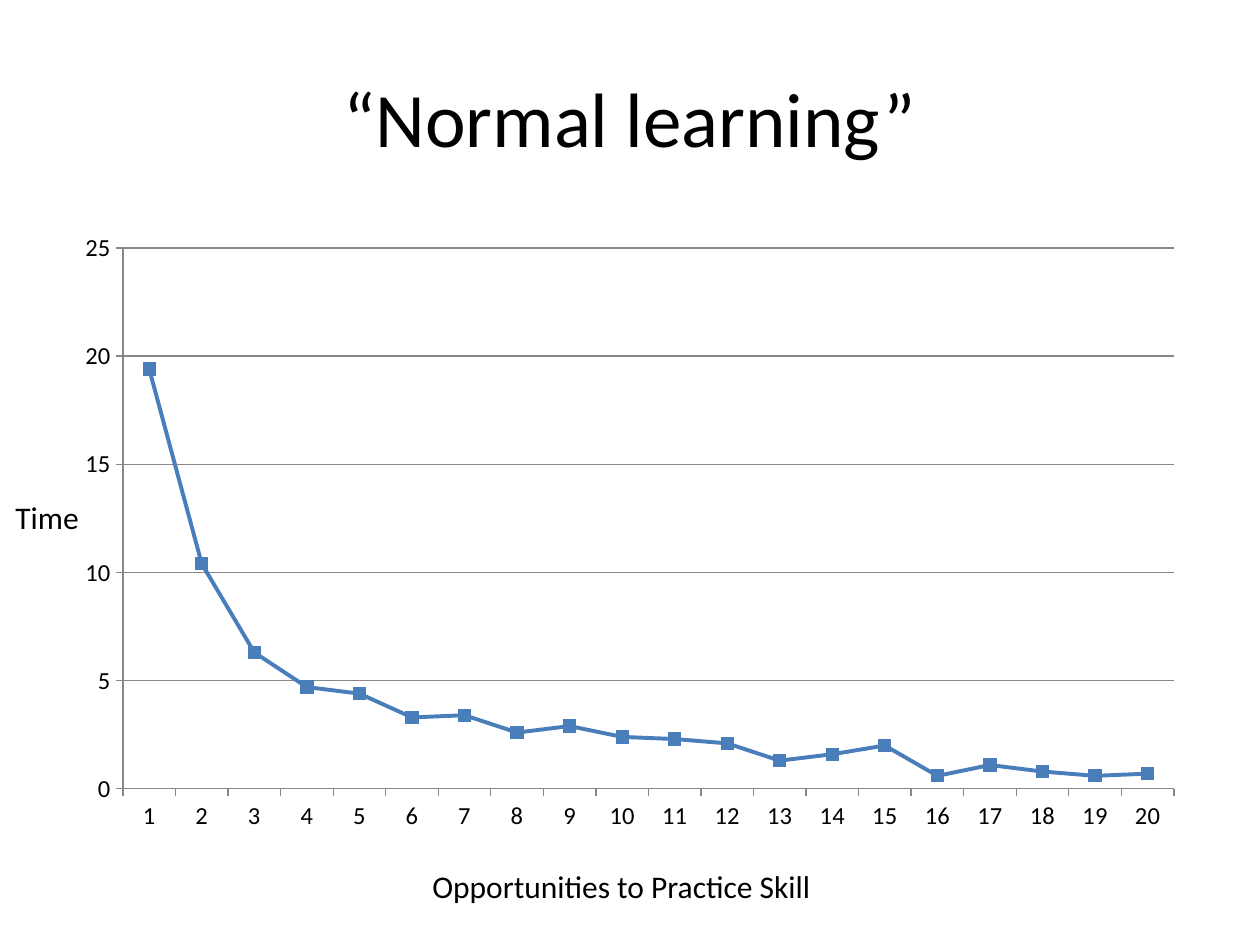
import lxml.etree
import pptx
import pptx.chart.data
import pptx.dml.color
import pptx.enum.chart
import pptx.enum.text
import pptx.oxml.ns
import pptx.util

BLACK = pptx.dml.color.RGBColor(0x00, 0x00, 0x00)
GRAY = pptx.dml.color.RGBColor(0x87, 0x87, 0x87)
BLUE = pptx.dml.color.RGBColor(0x4A, 0x7E, 0xBB)
MARKER_BLUE = pptx.dml.color.RGBColor(0x4F, 0x81, 0xBD)
FONT = "Calibri"
PX_PER_INCH = 126
TIMES = [19.4, 10.4, 6.3, 4.7, 4.4, 3.3, 3.4, 2.6, 2.9, 2.4,
         2.3, 2.1, 1.3, 1.6, 2, 0.6, 1.1, 0.8, 0.6, 0.7]


def px(n):
    return pptx.util.Emu(round(n * 914400 / PX_PER_INCH))


def style_font(font, size):
    font.name = FONT
    font.size = pptx.util.Pt(size)
    font.color.rgb = BLACK


def style_line(line, color, width):
    line.color.rgb = color
    line.width = pptx.util.Pt(width)


def add_text(s, box, text, size, align=pptx.enum.text.PP_ALIGN.LEFT,
             anchor=pptx.enum.text.MSO_ANCHOR.TOP):
    tf = s.shapes.add_textbox(*map(px, box)).text_frame
    tf.word_wrap = True
    tf.vertical_anchor = anchor
    p = tf.paragraphs[0]
    p.text = text
    p.alignment = align
    style_font(p.font, size)


def set_plot_layout(chart, box, plot_box):
    left, top, width, height = box
    x, y, w, h = plot_box
    plot_area = chart.plots[0]._element.getparent()
    qn = pptx.oxml.ns.qn
    for old in plot_area.findall(qn("c:layout")):
        plot_area.remove(old)
    layout = lxml.etree.Element(qn("c:layout"))
    manual = lxml.etree.SubElement(layout, qn("c:manualLayout"))
    settings = {
        "layoutTarget": "inner", "xMode": "edge", "yMode": "edge",
        "x": (x - left) / width, "y": (y - top) / height,
        "w": w / width, "h": h / height,
    }
    for name, value in settings.items():
        lxml.etree.SubElement(manual, qn(f"c:{name}")).set("val", str(value))
    plot_area.insert(0, layout)


def add_learning_curve(s, box):
    left, top, width, height = box
    data = pptx.chart.data.CategoryChartData()
    data.categories = [str(n) for n in range(1, len(TIMES) + 1)]
    data.add_series("Series 1", TIMES)
    chart = s.shapes.add_chart(
        pptx.enum.chart.XL_CHART_TYPE.LINE_MARKERS, *map(px, box), data).chart
    chart.has_title = False
    chart.has_legend = False
    style_font(chart.font, 14)
    set_plot_layout(chart, box, (left + 60, top + 28, width - 83, height - 83))

    for axis in (chart.category_axis, chart.value_axis):
        axis.major_tick_mark = pptx.enum.chart.XL_TICK_MARK.OUTSIDE
        axis.minor_tick_mark = pptx.enum.chart.XL_TICK_MARK.NONE
        style_line(axis.format.line, GRAY, 0.75)
    axis = chart.value_axis
    axis.minimum_scale, axis.maximum_scale, axis.major_unit = 0, 25, 5
    axis.has_major_gridlines = True
    style_line(axis.major_gridlines.format.line, GRAY, 0.75)

    chart.plots[0].vary_by_categories = False
    series = chart.plots[0].series[0]
    series.smooth = False
    style_line(series.format.line, BLUE, 2.25)
    marker = series.marker
    marker.style = pptx.enum.chart.XL_MARKER_STYLE.SQUARE
    marker.size = 7
    marker.format.fill.solid()
    marker.format.fill.fore_color.rgb = MARKER_BLUE
    style_line(marker.format.line, BLUE, 0.75)


def add_chart_slide(prs, box):
    left, top, width, height = box
    s = prs.slides.add_slide(prs.slide_layouts[6])
    add_text(s, (left + 63, top + 38, width - 126, 158), "“Normal learning”", 44,
             pptx.enum.text.PP_ALIGN.CENTER, pptx.enum.text.MSO_ANCHOR.MIDDLE)
    add_learning_curve(s, (left + 63, top + 220, width - 126, 624))
    add_text(s, (left + 3, top + 492, 126, 51), "Time", 18)
    add_text(s, (left + 420, top + 861, 683, 51),
             "Opportunities to Practice Skill", 18)


def main():
    prs = pptx.Presentation()
    prs.slide_width, prs.slide_height = px(1260), px(945)
    add_chart_slide(prs, (0, 0, 1260, 945))
    prs.save("out.pptx")


if __name__ == "__main__":
    main()
